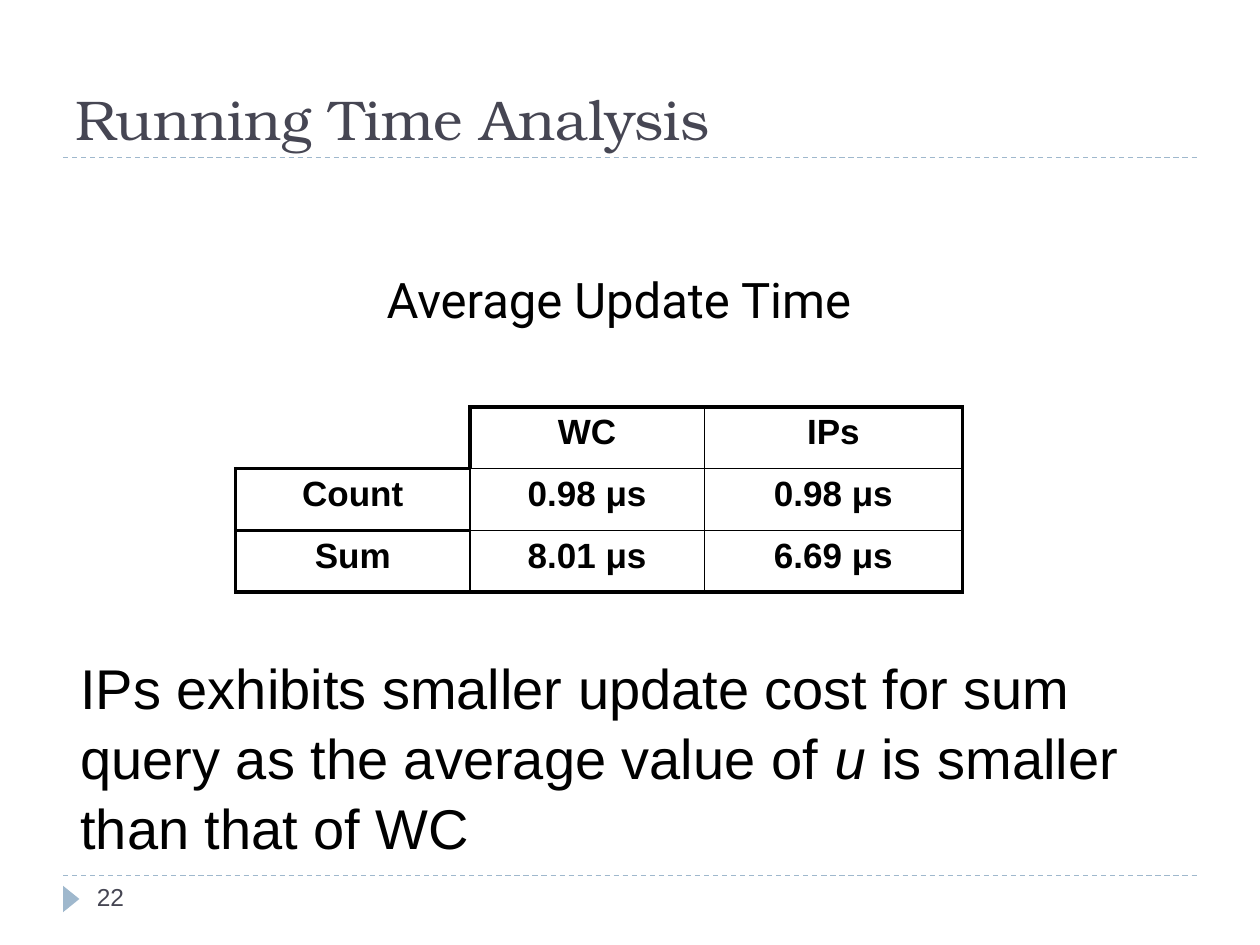
from lxml import etree
from pptx import Presentation
from pptx.dml.color import RGBColor
from pptx.enum import dml, shapes, text
from pptx.oxml import parse_xml
from pptx.oxml.ns import nsdecls, qn
from pptx.util import Inches, Pt

INK, ACCENT, BLACK = "464653", "9FB8CD", "000000"


def rgb(value):
    return RGBColor.from_string(value)


def write(frame, content, size, font="Arial", color=BLACK, bold=False, italic_word=None,
          align=text.PP_ALIGN.LEFT, anchor=text.MSO_ANCHOR.TOP, wrap=True, spacing=None):
    """Fill a text frame; italic_word is the one word set in italics."""
    frame.word_wrap = wrap
    frame.vertical_anchor = anchor
    paragraph = frame.paragraphs[0]
    paragraph.alignment = align
    if spacing:
        paragraph.line_spacing = spacing
    pieces = [content]
    if italic_word:
        before, word, after = content.partition(f" {italic_word} ")
        pieces = [before + " ", word.strip(), " " + after]
    for piece in pieces:
        run = paragraph.add_run()
        run.text = piece
        run.font.size = Pt(size)
        run.font.name = font
        run.font.bold = bold
        run.font.italic = piece == italic_word
        run.font.color.rgb = rgb(color)


prs = Presentation()
prs.slide_width, prs.slide_height = Inches(10), Inches(7.5)
slide = prs.slides.add_slide(prs.slide_layouts[6])

# Dashed rules under the title and above the footer
for y in (6.95, 1.25):
    rule = slide.shapes.add_connector(shapes.MSO_CONNECTOR.STRAIGHT,
                                      Inches(0.5), Inches(y), Inches(9.5), Inches(y))
    rule.line.color.rgb = rgb(ACCENT)
    rule.line.width = Pt(0.75)
    rule.line.dash_style = dml.MSO_LINE.DASH
    etree.SubElement(rule.element.spPr, qn("a:effectLst"))

# Footer marker
marker = slide.shapes.add_shape(shapes.MSO_SHAPE.ISOSCELES_TRIANGLE,
                                Inches(0.46), Inches(7.07), Inches(0.21), Inches(0.13))
marker.rotation = 90
marker.shadow.inherit = False
marker.fill.solid()
marker.fill.fore_color.rgb = rgb(ACCENT)
marker.line.fill.background()

# Title, page number, table caption and conclusion
conclusion = ("IPs exhibits smaller update cost for sum query as the average "
              "value of u is smaller than that of WC")
for box, content, style in (
    ((0.5, 0.17, 9, 1.08), "Running Time Analysis",
     dict(size=32, font="TeX Gyre Bonum", color=INK, anchor=text.MSO_ANCHOR.BOTTOM)),
    ((0.67, 6.95, 2.17, 0.4), "22", dict(size=14, color=INK)),
    ((2.97, 2.09, 3.91, 0.57), "Average Update Time",
     dict(size=28, font="Roboto", wrap=False)),
    ((0.54, 5.12, 9.23, 1.7), conclusion, dict(size=32, italic_word="u", spacing=1.04)),
):
    textbox = slide.shapes.add_textbox(*map(Inches, box))
    write(textbox.text_frame, content, **style)

# Update times
times = (("", "WC", "IPs"),
         ("Count", "0.98 μs", "0.98 μs"),
         ("Sum", "8.01 μs", "6.69 μs"))
table = slide.shapes.add_table(3, 3, Inches(1.87), Inches(3.23),
                               Inches(5.77), Inches(1.47)).table
table.first_row = table.horz_banding = False
for column, width in zip(table.columns, (1.86, 1.86, 2.05)):
    column.width = Inches(width)

for r, row in enumerate(times):
    table.rows[r].height = Inches(0.49)
    for c, value in enumerate(row):
        cell = table.cell(r, c)
        if value:
            write(cell.text_frame, value, 20, bold=True, align=text.PP_ALIGN.CENTER)
        corner = r == 0 and c == 0
        # Outer edges and the row-label edges are heavy, inner edges are light
        heavy = {"L": c == 0, "R": c == 2 or corner,
                 "T": r == 0 or c == 0, "B": r == 2 or c == 0}
        for side, is_heavy in heavy.items():
            if corner and side in "LT":
                width, paint = 0, "<a:noFill/>"
            else:
                width = Pt(2.25 if is_heavy else 1)
                paint = f'<a:solidFill><a:srgbClr val="{BLACK}"/></a:solidFill>'
            cell._tc.get_or_add_tcPr().append(parse_xml(
                f'<a:ln{side} {nsdecls("a")} w="{int(width)}">{paint}</a:ln{side}>'))
        cell.fill.background()

prs.save("out.pptx")
